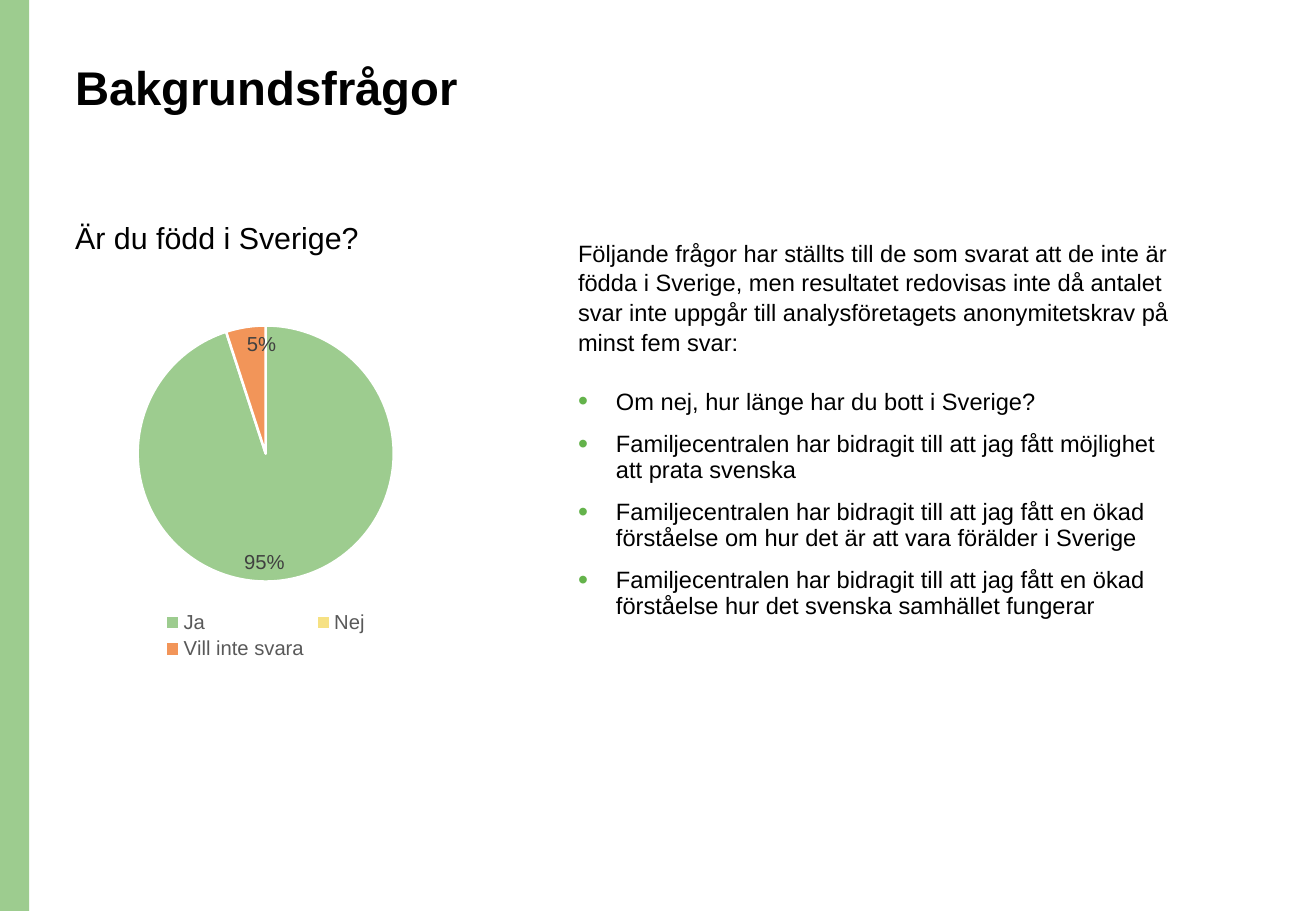
from lxml import etree
from pptx import Presentation
from pptx.chart.data import CategoryChartData
from pptx.dml.color import RGBColor
from pptx.enum.chart import XL_CHART_TYPE, XL_LABEL_POSITION, XL_LEGEND_POSITION
from pptx.enum.shapes import MSO_SHAPE
from pptx.oxml.ns import qn
from pptx.util import Pt

SLIDE_W, SLIDE_H = 780, 540
FONT = "Arial"
BLACK, WHITE, GREEN, BULLET_GREEN = "000000", "FFFFFF", "9DCC8F", "64B34B"
TITLE = "Bakgrundsfrågor"
QUESTION = "Är du född i Sverige?"
INTRO = ("Följande frågor har ställts till de som svarat att de inte är födda i Sverige, "
         "men resultatet redovisas inte då antalet svar inte uppgår till "
         "analysföretagets anonymitetskrav på minst fem svar:")
FOLLOW_UPS = [
    "Om nej, hur länge har du bott i Sverige?",
    "Familjecentralen har bidragit till att jag fått möjlighet att prata svenska",
    "Familjecentralen har bidragit till att jag fått en ökad förståelse om hur det är "
    "att vara förälder i Sverige",
    "Familjecentralen har bidragit till att jag fått en ökad förståelse hur det svenska "
    "samhället fungerar",
]
ANSWERS = [("Ja", 0.95, GREEN), ("Nej", 0, "F6E183"), ("Vill inte svara", 0.05, "F29559")]
LEFT, RIGHT = 37.5, 335.5


def color(value):
    return RGBColor.from_string(value)


def style(font, size, fill=BLACK, bold=False):
    font.name, font.size, font.bold = FONT, Pt(size), bold
    font.color.rgb = color(fill)


def add_bullet(p):
    pPr = p._p.get_or_add_pPr()
    pPr.set("marL", str(Pt(22.5)))
    pPr.set("indent", str(-Pt(22.5)))
    bu_color = etree.SubElement(pPr, qn("a:buClr"))
    etree.SubElement(bu_color, qn("a:srgbClr"), val=BULLET_GREEN)
    etree.SubElement(pPr, qn("a:buSzPct"), val="120000")
    etree.SubElement(pPr, qn("a:buFont"), typeface=FONT)
    etree.SubElement(pPr, qn("a:buChar"), char="•")


def add_text(s, box, lines, size, spacing=0.9, bold=False, bullets=False):
    tf = s.shapes.add_textbox(*map(Pt, box)).text_frame
    tf.word_wrap = True
    for i, line in enumerate(lines):
        p = tf.add_paragraph() if i else tf.paragraphs[0]
        p.text = line
        if bullets:
            add_bullet(p)
        p.line_spacing = spacing
        if i:
            p.space_before = Pt(10)
        style(p.runs[0].font, size, bold=bold)


def add_pie(s, box):
    data = CategoryChartData()
    data.categories = [name for name, _, _ in ANSWERS]
    data.add_series("Series 1", [value for _, value, _ in ANSWERS])
    chart = s.shapes.add_chart(XL_CHART_TYPE.PIE, *map(Pt, box), data).chart
    chart.has_title = False
    style(chart.font, 10)
    chart.has_legend = True
    chart.legend.position = XL_LEGEND_POSITION.BOTTOM
    chart.legend.include_in_layout = False
    style(chart.legend.font, 12, "595959")
    plot = chart.plots[0]
    plot.vary_by_categories = True
    plot.has_data_labels = True
    labels = plot.data_labels
    labels.show_value, labels.show_percentage = True, False
    labels.number_format = '[<0.01]"";[>0.01]0%'
    labels.number_format_is_linked = False
    labels.position = XL_LABEL_POSITION.INSIDE_END
    style(labels.font, 12, "404040")
    for i, (_, _, fill) in enumerate(ANSWERS):
        slice_format = plot.series[0].points[i].format
        slice_format.fill.solid()
        slice_format.fill.fore_color.rgb = color(fill)
        slice_format.line.color.rgb = color(WHITE)
        slice_format.line.width = Pt(1.5)


def main():
    prs = Presentation()
    prs.slide_width, prs.slide_height = Pt(SLIDE_W), Pt(SLIDE_H)
    s = prs.slides.add_slide(prs.slide_layouts[6])
    band = s.shapes.add_shape(MSO_SHAPE.RECTANGLE, 0, 0, Pt(17.3), Pt(SLIDE_H))
    band.shadow.inherit = False
    band.fill.solid()
    band.fill.fore_color.rgb = color(GREEN)
    band.line.fill.background()
    add_text(s, (LEFT, 34.5, 672.5, 73.5), [TITLE], 28, bold=True)
    add_text(s, (LEFT, 129, 330, 33), [QUESTION], 18)
    add_pie(s, (LEFT, 183, 240, 211))
    add_text(s, (RIGHT, 227.5, 362, 149), FOLLOW_UPS, 14, bullets=True)
    add_text(s, (RIGHT, 137, 375, 75), [INTRO], 14, spacing=1.05)
    prs.save("out.pptx")


if __name__ == "__main__":
    main()
